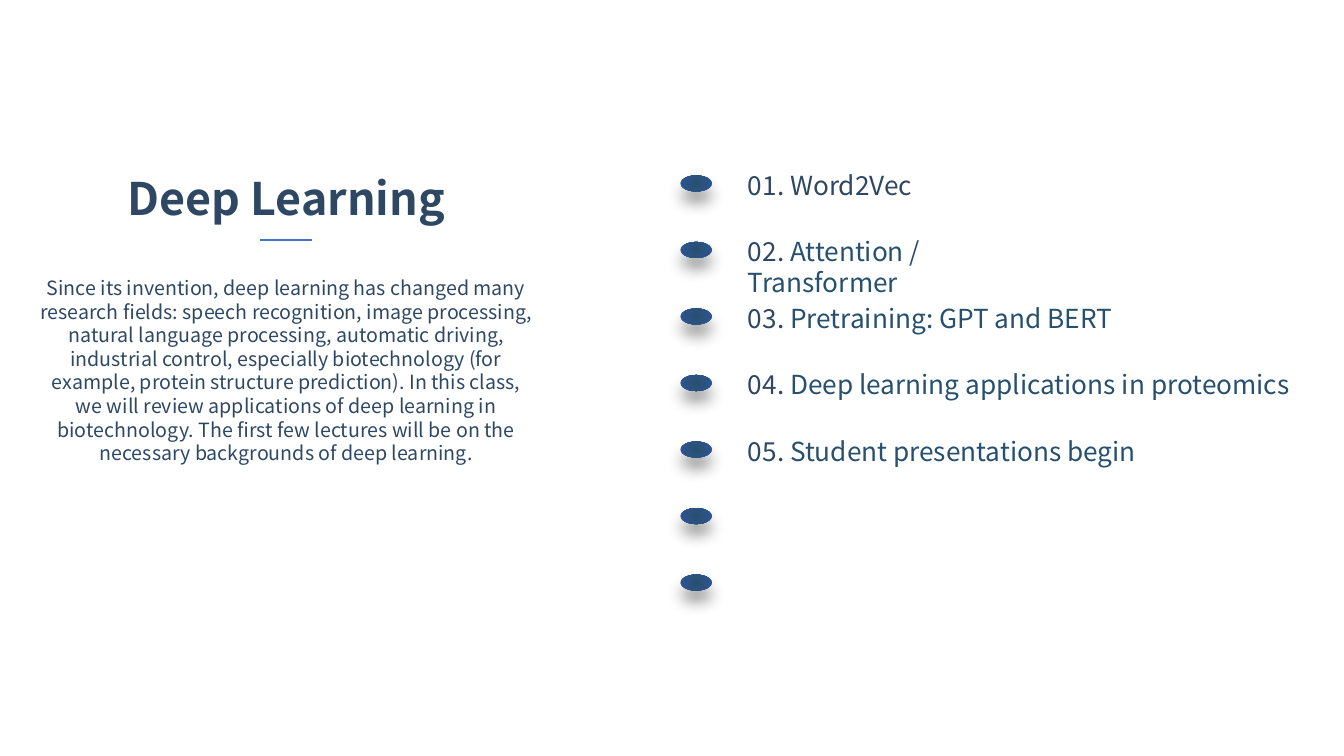
import pptx
import pptx.dml.color
import pptx.enum.shapes
import pptx.enum.text
import pptx.oxml
import pptx.util
from lxml import etree

Inches = pptx.util.Inches
Pt = pptx.util.Pt
RGBColor = pptx.dml.color.RGBColor
FONT = "Noto Sans CJK SC"
COLORS = {"ink": "2E4864", "teal": "27506E", "edge": "2F5597", "rule": "4472C4", "shadow": "000000"}
NAMESPACE = 'xmlns:a="http://schemas.openxmlformats.org/drawingml/2006/main"'

DOT_GRADIENT = f"""<a:gradFill {NAMESPACE} rotWithShape="1"><a:gsLst>
<a:gs pos="0"><a:srgbClr val="{COLORS['teal']}"/></a:gs>
<a:gs pos="100000"><a:srgbClr val="{COLORS['edge']}"/></a:gs></a:gsLst>
<a:path path="circle"><a:fillToRect l="50000" t="50000" r="50000" b="50000"/></a:path>
</a:gradFill>"""
DOT_SHADOW = f"""<a:effectLst {NAMESPACE}>
<a:outerShdw blurRad="{Pt(11)}" dist="{Pt(8)}" dir="5400000" algn="t" rotWithShape="0">
<a:srgbClr val="{COLORS['shadow']}"><a:alpha val="40000"/></a:srgbClr>
</a:outerShdw></a:effectLst>"""

TOPICS = [
    "Word2Vec",
    "Attention / Transformer",
    "Pretraining: GPT and BERT",
    "Deep learning applications in proteomics",
    "Student presentations begin",
]
DOT_COUNT = 7
DOT_LEFT, DOT_TOP, DOT_WIDTH, DOT_HEIGHT = 6.75, 1.74, 0.31, 0.16
ROW_PITCH = 0.66
TOPIC_LEFT, TOPIC_RISE = 7.32, 0.11
WIDE, NARROW = 5.8, 2.2


def add_text_frame(left, top, width, height):
    box = slide.shapes.add_textbox(Inches(left), Inches(top), Inches(width), Inches(height))
    box.text_frame.word_wrap = True
    return box.text_frame


def style_paragraph(paragraph, size, line_height, color="ink", bold=False):
    paragraph.line_spacing = Pt(line_height)
    paragraph.font.name = FONT
    paragraph.font.size = Pt(size)
    paragraph.font.bold = bold
    paragraph.font.color.rgb = RGBColor.from_string(COLORS[color])


presentation = pptx.Presentation()
presentation.slide_width = Inches(13.33)
presentation.slide_height = Inches(7.5)
slide = presentation.slides.add_slide(presentation.slide_layouts[6])

# Title and introduction
introduction = add_text_frame(0.27, 1.62, 5.14, 3.06)
title = introduction.paragraphs[0]
title.text = "Deep Learning"
style_paragraph(title, 32, 40, bold=True)
summary = introduction.add_paragraph()
summary.text = (
    "Since its invention, deep learning has changed many research fields: speech recognition, "
    "image processing, natural language processing, automatic driving, industrial control, "
    "especially biotechnology (for example, protein structure prediction). In this class, we will "
    "review applications of deep learning in biotechnology. The first few lectures will be on the "
    "necessary backgrounds of deep learning."
)
style_paragraph(summary, 14, 16.85)
summary.space_before = Pt(37)
for paragraph in introduction.paragraphs:
    paragraph.alignment = pptx.enum.text.PP_ALIGN.CENTER

rule = slide.shapes.add_connector(
    pptx.enum.shapes.MSO_CONNECTOR.STRAIGHT, Inches(2.58), Inches(2.38), Inches(3.09), Inches(2.38)
)
rule.line.color.rgb = RGBColor.from_string(COLORS["rule"])
rule.line.width = Pt(1.5)
etree.SubElement(rule.element.spPr, pptx.oxml.ns.qn("a:effectLst"))

# Dots down the agenda
for row in range(DOT_COUNT):
    dot = slide.shapes.add_shape(
        pptx.enum.shapes.MSO_SHAPE.OVAL,
        Inches(DOT_LEFT), Inches(DOT_TOP + row * ROW_PITCH), Inches(DOT_WIDTH), Inches(DOT_HEIGHT),
    )
    dot.line.fill.background()
    properties = dot.element.spPr
    properties.insert(2, pptx.oxml.parse_xml(DOT_GRADIENT))
    properties.append(pptx.oxml.parse_xml(DOT_SHADOW))

# Numbered topics beside the dots
for row, topic in enumerate(TOPICS):
    width = NARROW if "/" in topic else WIDE
    frame = add_text_frame(TOPIC_LEFT, DOT_TOP + row * ROW_PITCH - TOPIC_RISE, width, 0.42)
    paragraph = frame.paragraphs[0]
    style_paragraph(paragraph, 18.7, 22.2, "ink" if row == 0 else "teal")
    number = paragraph.add_run()
    number.text = f"{row + 1:02d}. "
    number.font.color.rgb = RGBColor.from_string(COLORS["ink"])
    paragraph.add_run().text = topic

presentation.save("out.pptx")
